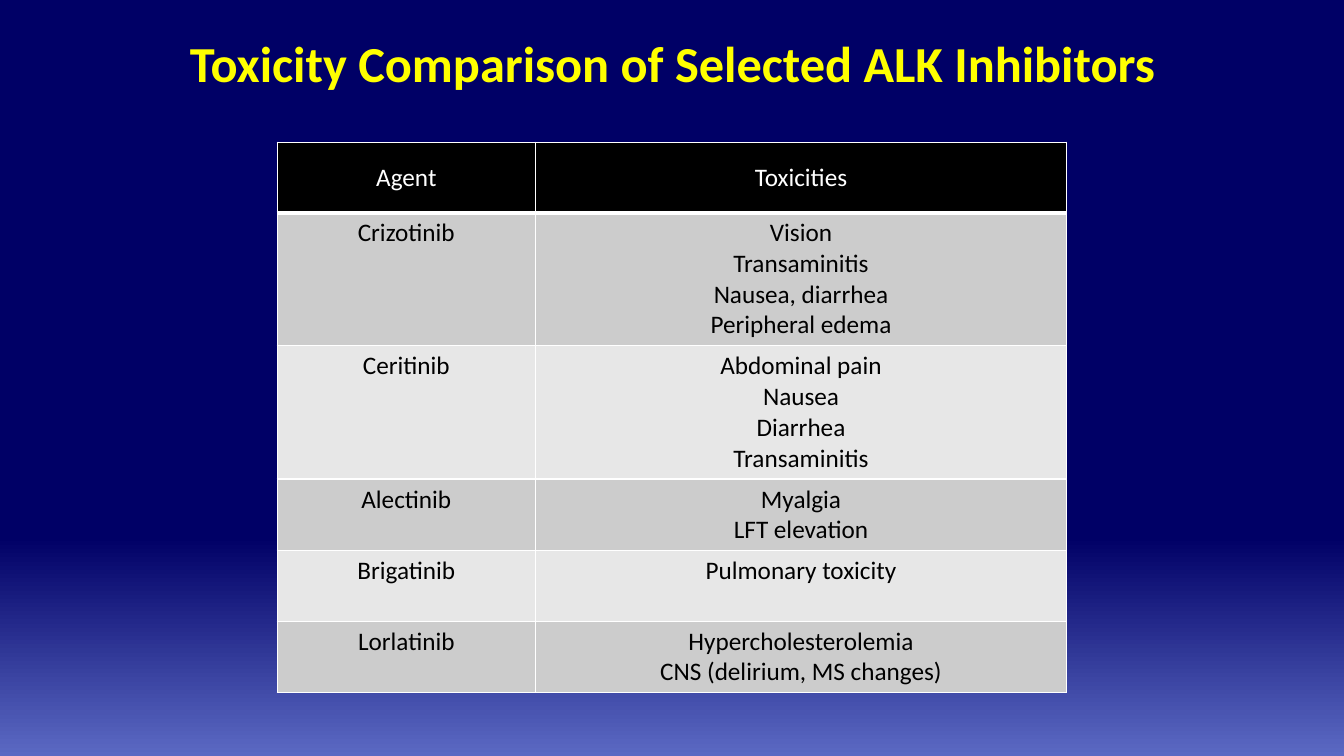
from dataclasses import dataclass

from lxml import etree
from pptx import Presentation
from pptx.dml.color import RGBColor
from pptx.enum.text import MSO_ANCHOR, PP_ALIGN
from pptx.oxml.ns import qn
from pptx.slide import Slide
from pptx.table import _Cell
from pptx.util import Inches, Pt

CENTER = PP_ALIGN.CENTER
MIDDLE, TOP = MSO_ANCHOR.MIDDLE, MSO_ANCHOR.TOP
FONT = "Calibri"
TITLE_ONLY = 5
NAVY, PERIWINKLE, YELLOW = "000066", "5B69C3", "FFFF00"
WHITE, BLACK = "FFFFFF", "000000"
BANDS = ("CCCCCC", "E7E7E7")
COLUMN_WIDTHS = (2.56, 5.27)


@dataclass(frozen=True)
class TableRow:
    """One agent with its toxicities and the row height in inches."""

    agent: str
    toxicities: tuple[str, ...]
    height: float


HEADER = TableRow("Agent", ("Toxicities",), 0.7)
AGENTS = (
    TableRow("Crizotinib", ("Vision", "Transaminitis", "Nausea, diarrhea", "Peripheral edema"), 1.32),
    TableRow("Ceritinib", ("Abdominal pain", "Nausea", "Diarrhea", "Transaminitis"), 1.3),
    TableRow("Alectinib", ("Myalgia", "LFT elevation"), 0.7),
    TableRow("Brigatinib", ("Pulmonary toxicity",), 0.7),
    TableRow("Lorlatinib", ("Hypercholesterolemia", "CNS (delirium, MS changes)"), 0.7),
)


def color(value: str) -> RGBColor:
    """Turn a hex string into a colour."""
    return RGBColor.from_string(value)


def format_text(frame, size: int, ink: str, bold: bool = False) -> None:
    """Centre every paragraph and format its runs."""
    for para in frame.paragraphs:
        para.alignment = CENTER
        for span in para.runs:
            span.font.name = FONT
            span.font.size = Pt(size)
            span.font.bold = bold
            span.font.color.rgb = color(ink)


def paint_background(page: Slide) -> None:
    """Fill the page with a downward gradient."""
    fill = page.background.fill
    fill.gradient()
    fill.gradient_angle = 270
    for stop, (position, shade) in zip(fill.gradient_stops, ((0.71, NAVY), (1, PERIWINKLE))):
        stop.position = position
        stop.color.rgb = color(shade)


def add_title(page: Slide, text: str) -> None:
    """Place and format the title."""
    title = page.shapes.title
    title.left, title.top = Inches(0.18), Inches(0.03)
    title.width, title.height = Inches(12.99), Inches(1.25)
    frame = title.text_frame
    frame.text = text
    frame.vertical_anchor = MIDDLE
    frame.paragraphs[0].line_spacing = 0.9
    format_text(frame, 36, YELLOW, bold=True)


def add_borders(cell: _Cell, bottom: int) -> None:
    """Draw white borders around a cell."""
    properties = cell._tc.get_or_add_tcPr()
    for side, width in (("L", 1), ("R", 1), ("T", 1), ("B", bottom)):
        line = etree.SubElement(properties, qn(f"a:ln{side}"), w=str(Pt(width)))
        fill = etree.SubElement(line, qn("a:solidFill"))
        etree.SubElement(fill, qn("a:srgbClr"), val=WHITE)


def fill_cell(cell: _Cell, lines: tuple[str, ...], shade: str, is_header: bool) -> None:
    """Write and style one table cell."""
    cell.text_frame.text = "\n".join(lines)
    cell.vertical_anchor = MIDDLE if is_header else TOP
    format_text(cell.text_frame, 18, WHITE if is_header else BLACK)
    add_borders(cell, bottom=3 if is_header else 1)
    cell.fill.solid()
    cell.fill.fore_color.rgb = color(shade)


def add_toxicity_table(page: Slide) -> None:
    """Build the table of agents and toxicities."""
    rows = (HEADER, *AGENTS)
    table = page.shapes.add_table(
        len(rows), len(COLUMN_WIDTHS), Inches(2.75), Inches(1.41),
        Inches(sum(COLUMN_WIDTHS)), Inches(sum(row.height for row in rows)),
    ).table
    for column, width in zip(table.columns, COLUMN_WIDTHS):
        column.width = Inches(width)
    for index, row in enumerate(rows):
        is_header = index == 0
        shade = BLACK if is_header else BANDS[(index - 1) % 2]
        table.rows[index].height = Inches(row.height)
        for column_index, lines in enumerate(((row.agent,), row.toxicities)):
            fill_cell(table.cell(index, column_index), lines, shade, is_header)


def main() -> None:
    """Build and save the deck."""
    deck = Presentation()
    deck.slide_width, deck.slide_height = Inches(13.33), Inches(7.5)
    page = deck.slides.add_slide(deck.slide_layouts[TITLE_ONLY])
    paint_background(page)
    add_title(page, "Toxicity Comparison of Selected ALK Inhibitors")
    add_toxicity_table(page)
    deck.save("out.pptx")


if __name__ == "__main__":
    main()
